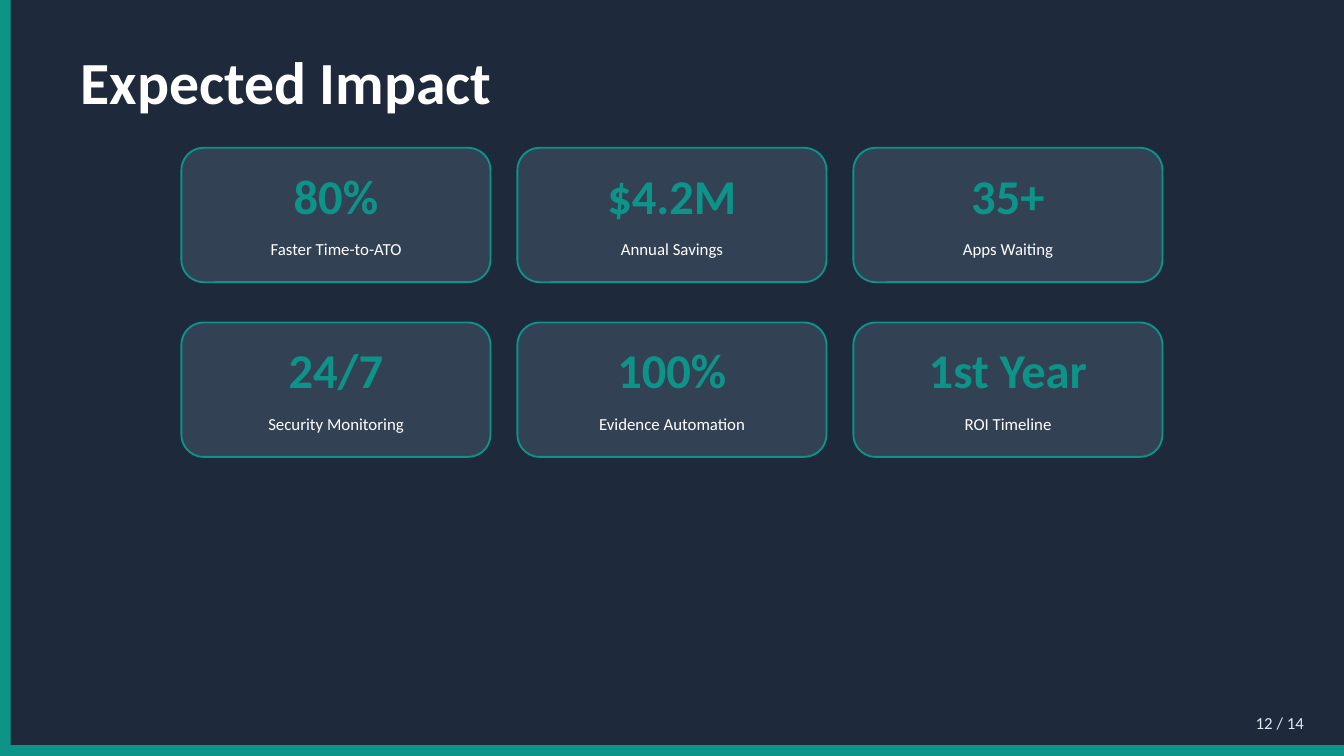
from pptx import Presentation
from pptx.dml.color import RGBColor
from pptx.enum.shapes import MSO_SHAPE
from pptx.enum.text import MSO_ANCHOR, PP_ALIGN
from pptx.util import Pt

RECTANGLE = MSO_SHAPE.RECTANGLE
ROUNDED = MSO_SHAPE.ROUNDED_RECTANGLE
MIDDLE = MSO_ANCHOR.MIDDLE
LEFT, CENTER, RIGHT = PP_ALIGN.LEFT, PP_ALIGN.CENTER, PP_ALIGN.RIGHT

COLORS = {
    "navy": "1E293B",
    "teal": "0D9488",
    "slate": "334155",
    "white": "FFFFFF",
    "mist": "E2E8F0",
}
FONT = "Calibri"
PAGE_WIDTH, PAGE_HEIGHT = 720, 405
BAR = 5.76
COLUMNS = 3
CARD_WIDTH, CARD_HEIGHT = 165.6, 72
COLUMN_STEP, ROW_STEP = 180, 93.6

METRICS = [
    ("80%", "Faster Time-to-ATO"),
    ("$4.2M", "Annual Savings"),
    ("35+", "Apps Waiting"),
    ("24/7", "Security Monitoring"),
    ("100%", "Evidence Automation"),
    ("1st Year", "ROI Timeline"),
]


def color(name):
    return RGBColor.from_string(COLORS[name])


def add_panel(page, kind, left, top, width, height, fill, outline=None):
    panel = page.shapes.add_shape(kind, Pt(left), Pt(top), Pt(width), Pt(height))
    panel.shadow.inherit = False
    panel.fill.solid()
    panel.fill.fore_color.rgb = color(fill)
    if outline:
        panel.line.color.rgb = color(outline)
        panel.line.width = Pt(1)
    else:
        panel.line.fill.background()


def write_text(box, text, size, ink, align, bold=False):
    frame = box.text_frame
    frame.text = text
    frame.word_wrap = True
    frame.vertical_anchor = MIDDLE
    para = frame.paragraphs[0]
    para.alignment = align
    font = para.runs[0].font
    font.name = FONT
    font.size = Pt(size)
    font.bold = bold
    font.color.rgb = color(ink)


def add_label(page, left, top, width, height, text, size, ink, align, bold=False):
    box = page.shapes.add_textbox(Pt(left), Pt(top), Pt(width), Pt(height))
    write_text(box, text, size, ink, align, bold)


def add_backdrop(page, width, height):
    add_panel(page, RECTANGLE, 0, 0, width, height, "navy")
    add_panel(page, RECTANGLE, 0, 0, BAR, height, "teal")
    add_panel(page, RECTANGLE, 0, height - BAR, width, BAR, "teal")


def place_title(page, left, top, width, height, text):
    title = page.shapes.title
    title.left, title.top = Pt(left), Pt(top)
    title.width, title.height = Pt(width), Pt(height)
    write_text(title, text, 32, "white", LEFT, bold=True)
    page.shapes.element.append(title.element)


def add_metric_card(page, left, top, width, height, value, caption):
    add_panel(page, ROUNDED, left, top, width, height, "slate", "teal")
    add_label(page, left, top + height * 0.1, width, height * 0.5,
              value, 26, "teal", CENTER, bold=True)
    add_label(page, left, top + height * 0.6, width, height * 0.3,
              caption, 9, "white", CENTER)


def add_metric_grid(page, left, top):
    for index, (value, caption) in enumerate(METRICS):
        row, column = divmod(index, COLUMNS)
        add_metric_card(page, left + column * COLUMN_STEP, top + row * ROW_STEP,
                        CARD_WIDTH, CARD_HEIGHT, value, caption)


def main():
    deck = Presentation()
    deck.slide_width, deck.slide_height = Pt(PAGE_WIDTH), Pt(PAGE_HEIGHT)
    page = deck.slides.add_slide(deck.slide_layouts.get_by_name("Title Only"))
    add_backdrop(page, PAGE_WIDTH, PAGE_HEIGHT)
    place_title(page, 36, 21.6, 648, 43.2, "Expected Impact")
    add_metric_grid(page, 97.2, 79.2)
    add_label(page, 648, 376.2, 57.6, 21.6, "12 / 14", 9, "mist", RIGHT)
    deck.save("out.pptx")


if __name__ == "__main__":
    main()
